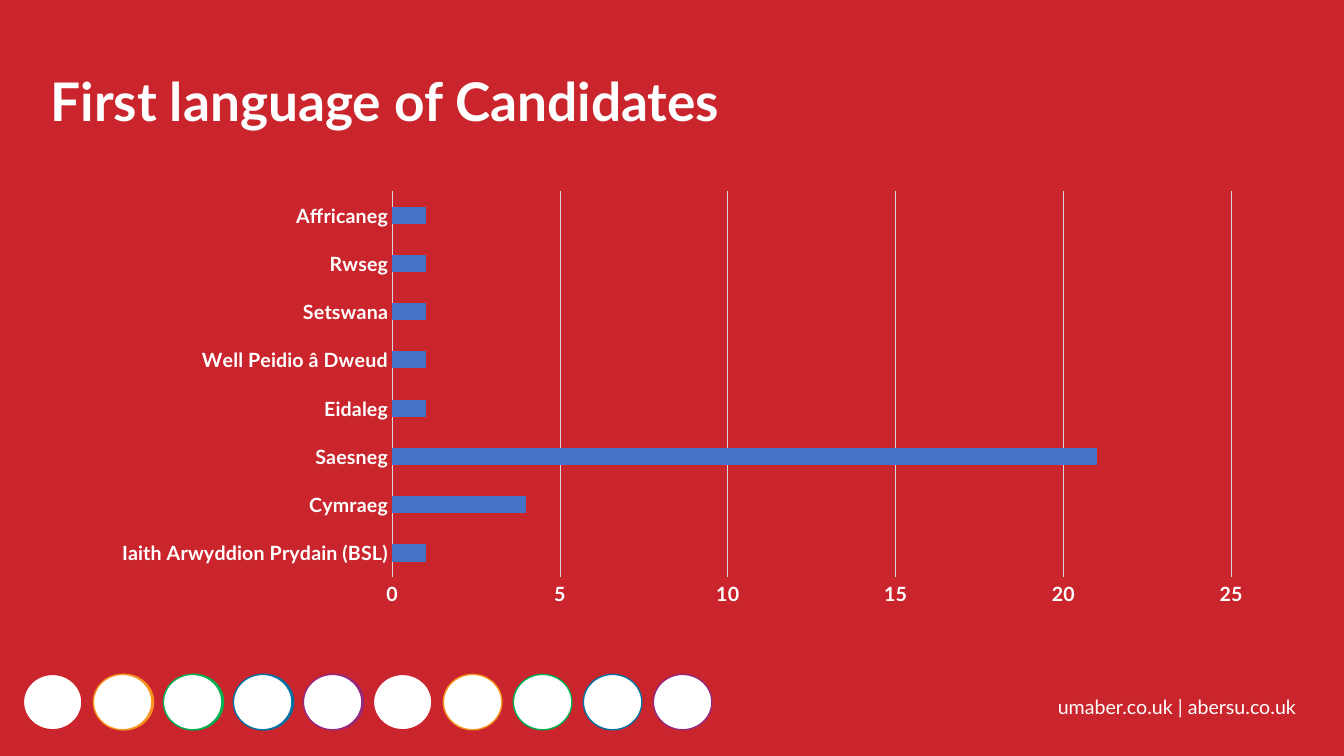
import pptx
import pptx.chart.data
import pptx.dml.color
import pptx.enum.chart
import pptx.enum.shapes
import pptx.enum.text
import pptx.util

Pt = pptx.util.Pt
FONT = "Lato"
RED, WHITE, GRID, BAR = "CA252C", "FFFFFF", "D9D9D9", "4472C4"
RING_COLORS = [RED, "F7941F", "00AF50", "0171A3", "95277D"]
LANGUAGES = {
    "Iaith Arwyddion Prydain (BSL)": 1,
    "Cymraeg": 4,
    "Saesneg": 21,
    "Eidaleg": 1,
    "Well Peidio â Dweud": 1,
    "Setswana": 1,
    "Rwseg": 1,
    "Affricaneg": 1,
}


def color(value):
    return pptx.dml.color.RGBColor.from_string(value)


def set_font(font, formats):
    for name, value in formats.items():
        setattr(font, name, value)
    font.color.rgb = color(WHITE)


def set_line(line, value, width):
    line.color.rgb = color(value)
    line.width = Pt(width)


def add_text(page, left, top, width, height, text, formats, spacing=1.0):
    box = page.shapes.add_textbox(Pt(left), Pt(top), Pt(width), Pt(height))
    box.text_frame.word_wrap = True
    box.text_frame.vertical_anchor = pptx.enum.text.MSO_ANCHOR.TOP
    para = box.text_frame.paragraphs[0]
    para.line_spacing = spacing
    span = para.add_run()
    span.text = text
    set_font(span.font, formats)


def add_circle(page, left, top, width, height, fill, outline):
    circle = page.shapes.add_shape(
        pptx.enum.shapes.MSO_SHAPE.OVAL, Pt(left), Pt(top), Pt(width), Pt(height))
    circle.shadow.inherit = False
    circle.fill.solid()
    circle.fill.fore_color.rgb = color(fill)
    set_line(circle.line, outline, 1)


def add_circle_row(page, left, top, width, height):
    pitch, shade_offset = 50, 1.2
    # Coloured discs behind the first five circles
    for index, ring in enumerate(RING_COLORS):
        add_circle(page, left + index * pitch + shade_offset, top, width, height, ring, ring)
    # White circles with coloured outlines
    for index, ring in enumerate(RING_COLORS * 2):
        add_circle(page, left + index * pitch, top, width, height, WHITE, ring)


def add_language_chart(page, left, top, width, height):
    data = pptx.chart.data.CategoryChartData()
    data.categories = list(LANGUAGES)
    data.add_series("Series 1", list(LANGUAGES.values()))
    chart = page.shapes.add_chart(
        pptx.enum.chart.XL_CHART_TYPE.BAR_CLUSTERED,
        Pt(left), Pt(top), Pt(width), Pt(height), data).chart
    chart.has_legend = False
    chart.has_title = False
    formats = {"name": FONT, "size": Pt(14), "bold": True}
    set_font(chart.font, formats)

    # Bars
    plot = chart.plots[0]
    plot.gap_width = 182
    plot.vary_by_categories = False
    bars = plot.series[0].format.fill
    bars.solid()
    bars.fore_color.rgb = color(BAR)

    # Axes and gridlines
    for axis in (chart.category_axis, chart.value_axis):
        axis.major_tick_mark = pptx.enum.chart.XL_TICK_MARK.NONE
        axis.minor_tick_mark = pptx.enum.chart.XL_TICK_MARK.NONE
        set_font(axis.tick_labels.font, formats)
    set_line(chart.category_axis.format.line, GRID, 0.75)
    chart.category_axis.has_major_gridlines = False
    values = chart.value_axis
    values.minimum_scale, values.maximum_scale, values.major_unit = 0, 25, 5
    values.format.line.fill.background()
    values.has_major_gridlines = True
    set_line(values.major_gridlines.format.line, GRID, 0.75)


def main():
    deck = pptx.Presentation()
    deck.slide_width, deck.slide_height = Pt(960), Pt(540)
    page = deck.slides.add_slide(deck.slide_layouts[6])
    page.background.fill.solid()
    page.background.fill.fore_color.rgb = color(RED)

    # Footer
    add_circle_row(page, 16.7, 481.7, 41.8, 39.6)
    add_text(page, 748.5, 492.5, 201.6, 24.5, "umaber.co.uk | abersu.co.uk",
             {"name": FONT, "size": Pt(14)})

    # Title and chart
    add_text(page, 29, 50.4, 822, 63.4, "First language of Candidates",
             {"name": FONT, "size": Pt(38), "bold": True}, 0.9)
    add_language_chart(page, 70.6, 130.3, 833.8, 308.2)

    deck.save("out.pptx")


if __name__ == "__main__":
    main()
